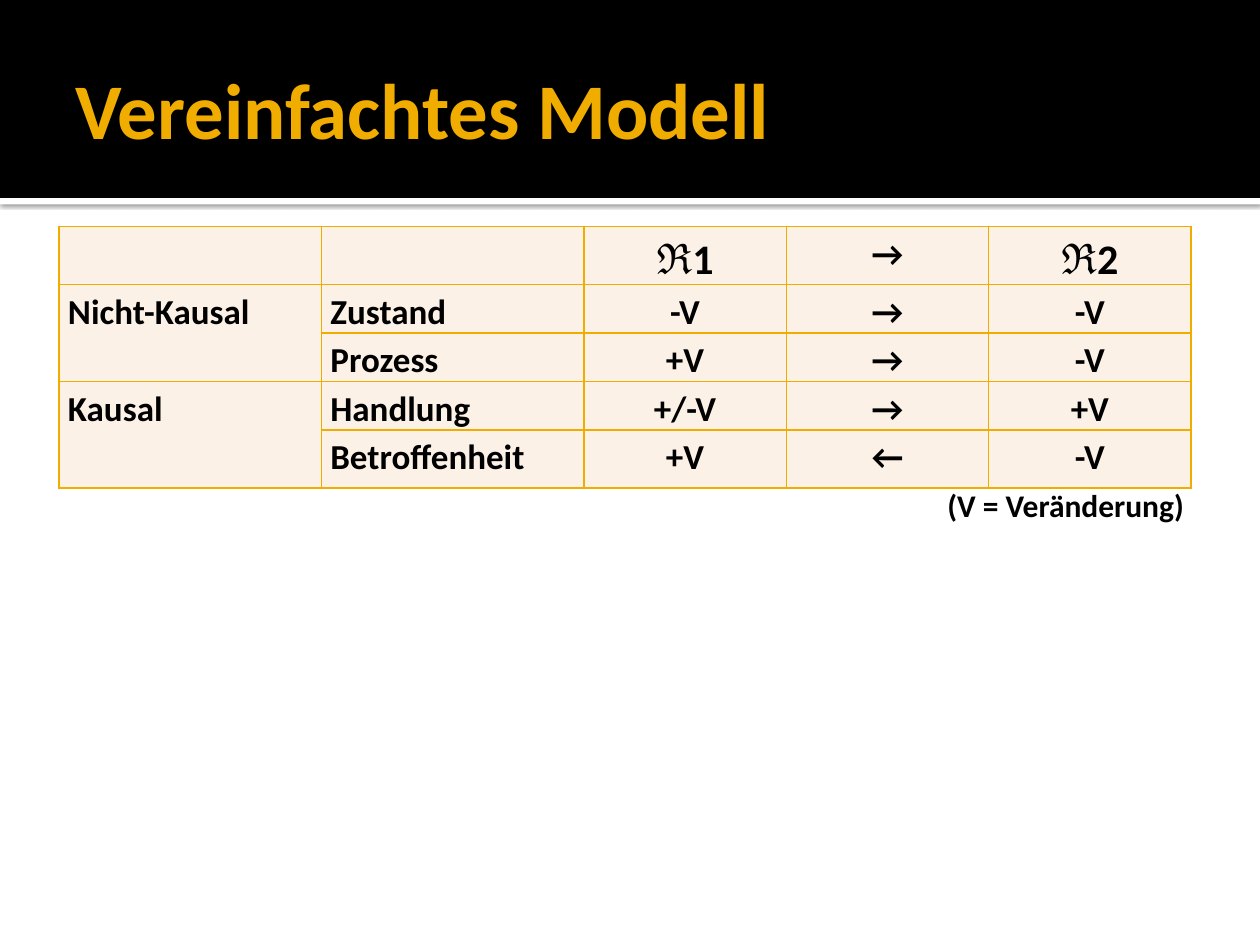
from lxml import etree
from pptx import Presentation
from pptx.dml.color import RGBColor
from pptx.enum import shapes, text
from pptx.oxml import ns
from pptx.util import Cm, Pt

GOLD = RGBColor(0xF0, 0xAD, 0x00)
CREAM = RGBColor(0xFC, 0xF1, 0xE7)
BLACK = RGBColor(0, 0, 0)
WHITE = RGBColor(255, 255, 255)

LEFT, MID = text.PP_ALIGN.JUSTIFY, text.PP_ALIGN.CENTER
COLS = [5.29, 5.29, 4.08, 4.08, 4.08]
ROWS = [0.97, 0.81, 0.81, 0.81, 1.17]
MODEL = [
    ["", "", "ℜ1", "→", "ℜ2"],
    ["Nicht-Kausal", "Zustand", "-V", "→", "-V"],
    ["", "Prozess", "+V", "→", "-V"],
    ["Kausal", "Handlung", "+/-V", "→", "+V"],
    ["", "Betroffenheit", "+V", "←", "-V"],
]


def sub(node, tag, **attrs):
    """Add a DrawingML child element and return it."""
    return etree.SubElement(node, ns.qn(tag), {k: str(v) for k, v in attrs.items()})


def write(frame, words, size=20, color=BLACK, align=None, space=None):
    """Put one bold paragraph into a text frame."""
    par = frame.paragraphs[0]
    par.alignment = align
    par.line_spacing = space
    run = par.add_run()
    run.text = words
    font = run.font
    font.name, font.size, font.bold = "Calibri", Pt(size), True
    font.color.rgb = color


class Deck:
    def __init__(self):
        self.prs = Presentation()
        self.prs.slide_width, self.prs.slide_height = Cm(25.4), Cm(19.05)
        self.slide = self.prs.slides.add_slide(self.prs.slide_layouts[6])

    def bar(self, top, height, color, shadow=False):
        """Draw a band across the full slide width."""
        box = self.slide.shapes.add_shape(
            shapes.MSO_SHAPE.RECTANGLE, 0, Cm(top), self.prs.slide_width, Cm(height))
        box.shadow.inherit = False
        box.fill.solid()
        box.fill.fore_color.rgb = color
        box.line.fill.background()
        if shadow:
            effect = box._element.spPr.find(ns.qn("a:effectLst"))
            outer = sub(effect, "a:outerShdw", blurRad=Pt(2.5), dist=Pt(0.8),
                        dir=5400000, algn="tl", rotWithShape=0)
            tone = sub(outer, "a:srgbClr", val=BLACK)
            sub(tone, "a:alpha", val=60000)

    def label(self, left, top, width, height, words, anchor=text.MSO_ANCHOR.TOP,
              right=0.25, **style):
        box = self.slide.shapes.add_textbox(Cm(left), Cm(top), Cm(width), Cm(height))
        frame = box.text_frame
        frame.word_wrap = True
        frame.vertical_anchor = anchor
        frame.margin_right = Cm(right)
        write(frame, words, **style)

    def grid(self, left, top, cols, rows, data):
        table = self.slide.shapes.add_table(
            len(rows), len(cols), Cm(left), Cm(top), Cm(sum(cols)), Cm(sum(rows))).table
        for col, width in zip(table.columns, cols):
            col.width = Cm(width)
        for row, height in zip(table.rows, rows):
            row.height = Cm(height)
        for r, line in enumerate(data):
            for c, words in enumerate(line):
                cell = table.cell(r, c)
                self.frame(cell)
                if words:
                    cell.margin_left = cell.margin_right = Cm(0.18)
                    cell.margin_top = cell.margin_bottom = 0
                    write(cell.text_frame, words, size=24 if "ℜ" in words else 20,
                          align=LEFT if c < 2 else MID, space=1.15)
        return table

    def frame(self, cell):
        """Give a cell its gold borders and cream fill."""
        props = cell._tc.get_or_add_tcPr()
        for side in "LRTB":
            edge = sub(props, f"a:ln{side}", w=Pt(1))
            sub(sub(edge, "a:solidFill"), "a:srgbClr", val=GOLD)
        cell.fill.solid()
        cell.fill.fore_color.rgb = CREAM


def main():
    deck = Deck()
    deck.bar(3.99, 0.13, WHITE, shadow=True)
    deck.bar(0, 3.99, BLACK)
    deck.label(1.27, 0.43, 22.86, 3.48, "Vereinfachtes Modell",
               anchor=text.MSO_ANCHOR.MIDDLE, right=0.13, size=45, color=GOLD)
    table = deck.grid(1.19, 4.57, COLS, ROWS, MODEL)
    for top in (1, 3):
        table.cell(top, 0).merge(table.cell(top + 1, 0))
    deck.label(18.85, 9.68, 5.56, 1.02, "(V = Veränderung)", size=18)
    deck.prs.save("out.pptx")


if __name__ == "__main__":
    main()
